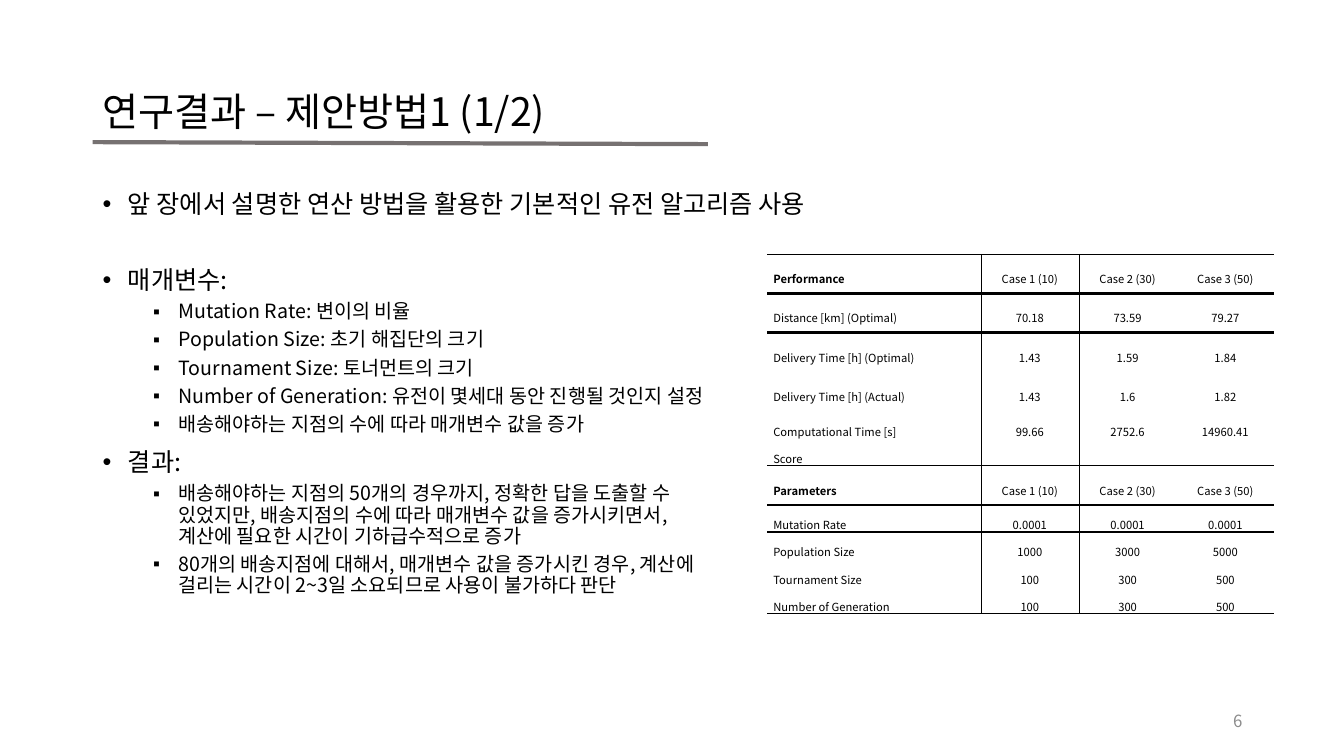
from dataclasses import dataclass

from lxml.etree import SubElement
from pptx import Presentation
from pptx.dml.color import RGBColor
from pptx.enum.shapes import MSO_CONNECTOR
from pptx.enum.text import MSO_ANCHOR, PP_ALIGN
from pptx.oxml.ns import qn
from pptx.slide import Slide
from pptx.table import _Cell
from pptx.text.text import TextFrame, _Paragraph
from pptx.util import Inches, Pt

FONT = "Noto Sans CJK KR"
BLACK = RGBColor(0x00, 0x00, 0x00)
GRAY = RGBColor(0x8C, 0x8C, 0x8C)
RULE_GRAY = RGBColor(0x76, 0x71, 0x71)
NO_GRID_STYLE = "{2D5ABB26-0587-4C30-8999-92F81FD0307C}"
THIN = 0.28
THICK = 1.98
CASES = ("Case 1 (10)", "Case 2 (30)", "Case 3 (50)")


@dataclass(frozen=True)
class Level:
    marker: str
    size: float
    indent: float
    space_before: float


@dataclass(frozen=True)
class Point:
    text: str
    level: Level
    extra_space: float = 0


@dataclass(frozen=True)
class ResultRow:
    label: str
    values: tuple[str, ...]
    height: float = 0.27
    is_header: bool = False
    closes_block: bool = False


TOPIC = Level("•", 18, 0.25, 10)
DETAIL = Level("▪", 14, 0.75, 5)

POINTS = [
    Point("앞 장에서 설명한 연산 방법을 활용한 기본적인 유전 알고리즘 사용", TOPIC),
    Point("매개변수:", TOPIC, extra_space=25),
    Point("Mutation Rate: 변이의 비율", DETAIL),
    Point("Population Size: 초기 해집단의 크기", DETAIL),
    Point("Tournament Size: 토너먼트의 크기", DETAIL),
    Point("Number of Generation: 유전이 몇세대 동안 진행될 것인지 설정", DETAIL),
    Point("배송해야하는 지점의 수에 따라 매개변수 값을 증가", DETAIL),
    Point("결과:", TOPIC),
    Point(
        "배송해야하는 지점의 50개의 경우까지, 정확한 답을 도출할 수 \n"
        "있었지만, 배송지점의 수에 따라 매개변수 값을 증가시키면서,\n"
        "계산에 필요한 시간이 기하급수적으로 증가",
        DETAIL,
    ),
    Point(
        "80개의 배송지점에 대해서, 매개변수 값을 증가시킨 경우, 계산에\n"
        "걸리는 시간이 2~3일 소요되므로 사용이 불가하다 판단",
        DETAIL,
    ),
]

RESULT_ROWS = [
    ResultRow("Performance", CASES, 0.39, is_header=True),
    ResultRow("Distance [km] (Optimal)", ("70.18", "73.59", "79.27"), 0.39),
    ResultRow("Delivery Time [h] (Optimal)", ("1.43", "1.59", "1.84"), 0.39),
    ResultRow("Delivery Time [h] (Actual)", ("1.43", "1.6", "1.82"), 0.39),
    ResultRow("Computational Time [s]", ("99.66", "2752.6", "14960.41")),
    ResultRow("Score", ("", "", ""), closes_block=True),
    ResultRow("Parameters", CASES, 0.39, is_header=True),
    ResultRow("Mutation Rate", ("0.0001", "0.0001", "0.0001")),
    ResultRow("Population Size", ("1000", "3000", "5000")),
    ResultRow("Tournament Size", ("100", "300", "500")),
    ResultRow("Number of Generation", ("100", "300", "500"), closes_block=True),
]
COLUMN_WIDTHS = (2.12, 0.97, 0.97, 0.97)


def format_runs(
    paragraph: _Paragraph, size: float, color: RGBColor = BLACK, bold: bool = False
) -> None:
    for run in paragraph.runs:
        run.font.size = Pt(size)
        run.font.bold = bold
        run.font.color.rgb = color
        run.font.name = FONT
        SubElement(run.font._element, qn("a:ea")).set("typeface", FONT)


def add_text_frame(
    slide: Slide, left: float, top: float, width: float, height: float, anchor: MSO_ANCHOR
) -> TextFrame:
    frame = slide.shapes.add_textbox(
        Inches(left), Inches(top), Inches(width), Inches(height)
    ).text_frame
    frame.word_wrap = True
    frame.vertical_anchor = anchor
    return frame


def add_heading(slide: Slide) -> None:
    heading = add_text_frame(slide, 0.92, 0.4, 11.5, 1.45, MSO_ANCHOR.MIDDLE)
    heading.text = "연구결과 – 제안방법1 (1/2)"
    heading.paragraphs[0].line_spacing = 0.9
    format_runs(heading.paragraphs[0], 28)


def add_heading_rule(slide: Slide) -> None:
    rule = slide.shapes.add_connector(
        MSO_CONNECTOR.STRAIGHT, Inches(0.92), Inches(1.41), Inches(7.02), Inches(1.43)
    )
    rule.line.color.rgb = RULE_GRAY
    rule.line.width = Pt(3)
    SubElement(rule._element.spPr, qn("a:effectLst"))


def add_points(slide: Slide) -> None:
    body = add_text_frame(slide, 0.92, 1.85, 11.41, 4.76, MSO_ANCHOR.TOP)
    for index, point in enumerate(POINTS):
        paragraph = body.paragraphs[0] if index == 0 else body.add_paragraph()
        level = point.level
        paragraph.text = point.text
        paragraph.level = int(level is DETAIL)
        paragraph.line_spacing = 0.9
        paragraph.space_before = Pt(level.space_before + point.extra_space)
        properties = paragraph._p.get_or_add_pPr()
        properties.set("marL", str(Inches(level.indent)))
        properties.set("indent", str(Inches(-0.25)))
        SubElement(properties, qn("a:buFont")).set("typeface", "Arial")
        SubElement(properties, qn("a:buChar")).set("char", level.marker)
        format_runs(paragraph, level.size)


def set_borders(cell: _Cell, borders: dict[str, float]) -> None:
    properties = cell._tc.get_or_add_tcPr()
    for side in ("L", "R", "T", "B"):
        if side in borders:
            line = SubElement(properties, qn(f"a:ln{side}"))
            line.set("w", str(Pt(borders[side])))
            fill = SubElement(line, qn("a:solidFill"))
            SubElement(fill, qn("a:srgbClr")).set("val", str(BLACK))


def fill_cell(cell: _Cell, text: str, column: int, is_header: bool) -> None:
    cell.text_frame.text = text
    cell.vertical_anchor = MSO_ANCHOR.MIDDLE
    cell.margin_left = cell.margin_right = Inches(0.06)
    cell.margin_top = cell.margin_bottom = Inches(0.02)
    paragraph = cell.text_frame.paragraphs[0]
    paragraph.line_spacing = 1.6
    paragraph.alignment = PP_ALIGN.CENTER if column else PP_ALIGN.LEFT
    if text:
        format_runs(paragraph, 8, bold=is_header and column == 0)
    else:
        SubElement(paragraph._p, qn("a:endParaRPr")).set("sz", "800")


def add_results(slide: Slide) -> None:
    results = slide.shapes.add_table(
        len(RESULT_ROWS), len(COLUMN_WIDTHS),
        Inches(7.61), Inches(2.52), Inches(5.04), Inches(3.58),
    ).table
    results.first_row = False
    results.horz_banding = False
    results._tbl.tblPr.find(qn("a:tableStyleId")).text = NO_GRID_STYLE
    for column, width in enumerate(COLUMN_WIDTHS):
        results.columns[column].width = Inches(width)
    for index, row in enumerate(RESULT_ROWS):
        results.rows[index].height = Inches(row.height)
        for column, text in enumerate((row.label, *row.values)):
            cell = results.cell(index, column)
            fill_cell(cell, text, column, row.is_header)
            borders: dict[str, float] = {}
            if column < 2:
                borders["L" if column else "R"] = THIN
            if row.is_header:
                borders.update(T=THIN, B=THICK)
            elif RESULT_ROWS[index - 1].is_header:
                borders["T"] = THICK
            if row.closes_block:
                borders["B"] = THIN
            set_borders(cell, borders)
            cell.fill.background()


def add_page_number(slide: Slide) -> None:
    page_number = add_text_frame(slide, 9.42, 6.95, 3, 0.4, MSO_ANCHOR.MIDDLE)
    page_number.text = "6"
    page_number.paragraphs[0].alignment = PP_ALIGN.RIGHT
    format_runs(page_number.paragraphs[0], 12, GRAY)


def main() -> None:
    presentation = Presentation()
    presentation.slide_width = Inches(13.33)
    presentation.slide_height = Inches(7.5)
    slide = presentation.slides.add_slide(presentation.slide_layouts[6])
    add_heading(slide)
    add_points(slide)
    add_results(slide)
    add_heading_rule(slide)
    add_page_number(slide)
    presentation.save("out.pptx")


if __name__ == "__main__":
    main()
